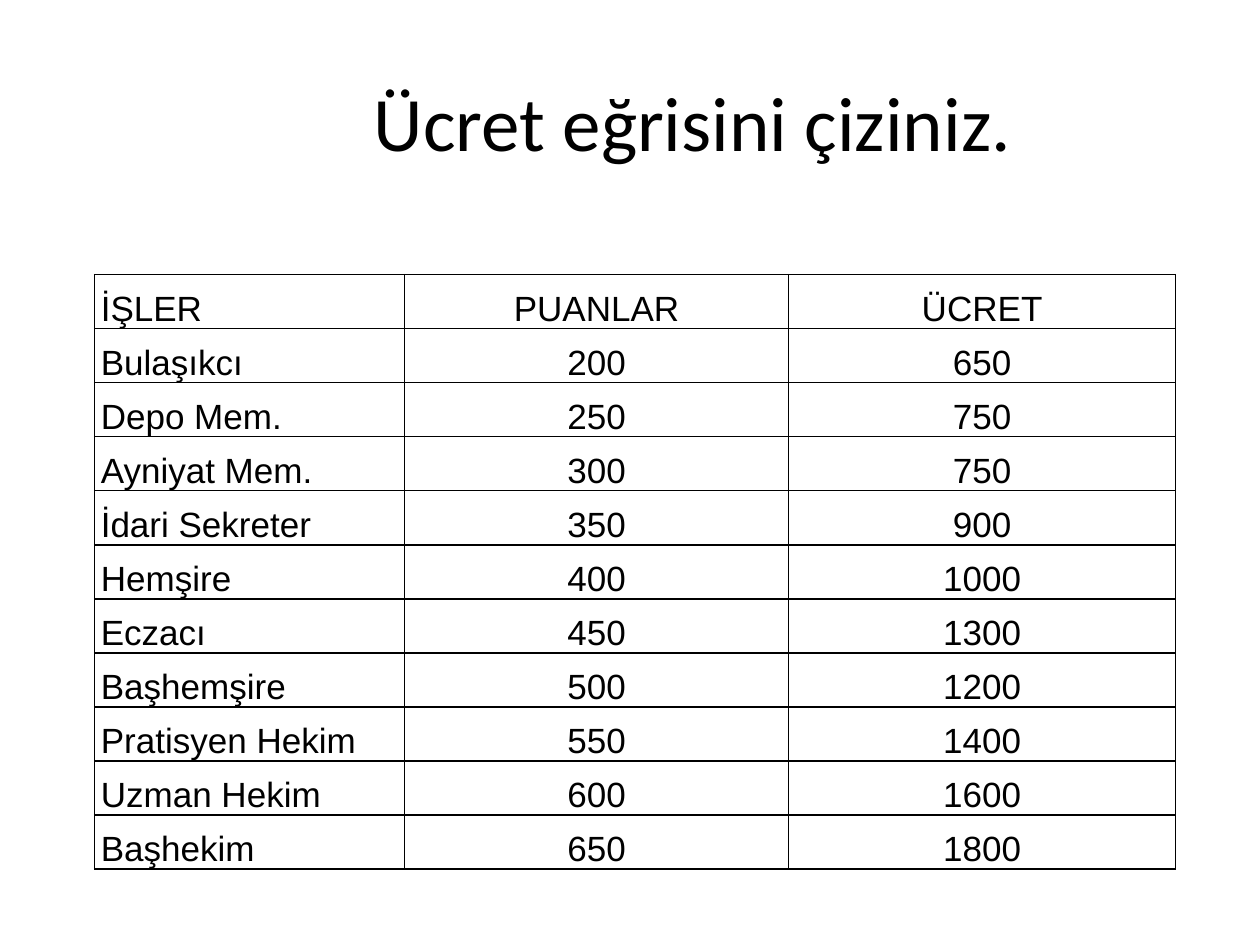
"""Build a slide with a table of jobs, their points and their wages."""
import dataclasses

import pptx
import pptx.dml.color
import pptx.enum.text
import pptx.oxml
import pptx.oxml.ns
import pptx.util

Inches = pptx.util.Inches
Align = pptx.enum.text.PP_ALIGN
Anchor = pptx.enum.text.MSO_ANCHOR
BLACK = "000000"
WHITE = "FFFFFF"
COLUMN_WIDTHS = (2.46, 3.05, 3.07)
TABLE_HEIGHT = 4.72


@dataclasses.dataclass(frozen=True)
class Job:
    name: str
    points: str
    wage: str


JOBS = (
    Job("İŞLER", "PUANLAR", "ÜCRET"),
    Job("Bulaşıkcı", "200", "650"),
    Job("Depo Mem.", "250", "750"),
    Job("Ayniyat Mem.", "300", "750"),
    Job("İdari Sekreter", "350", "900"),
    Job("Hemşire", "400", "1000"),
    Job("Eczacı", "450", "1300"),
    Job("Başhemşire", "500", "1200"),
    Job("Pratisyen Hekim", "550", "1400"),
    Job("Uzman Hekim", "600", "1600"),
    Job("Başhekim", "650", "1800"),
)


def color(code: str) -> pptx.dml.color.RGBColor:
    return pptx.dml.color.RGBColor.from_string(code)


def write(frame, text: str, *, font: str, size: float, align, code: str = BLACK) -> None:
    para = frame.paragraphs[0]
    para.alignment = align
    span = para.add_run()
    span.text = text
    span.font.name = font
    span.font.size = pptx.util.Pt(size)
    span.font.color.rgb = color(code)


def add_title(page, text: str) -> None:
    box = page.shapes.add_textbox(Inches(1.5), Inches(0.33), Inches(8), Inches(1.25))
    box.text_frame.word_wrap = True
    box.text_frame.vertical_anchor = Anchor.MIDDLE
    write(box.text_frame, text, font="Calibri", size=44, align=Align.CENTER)


def outline(cell, code: str = BLACK, width: float = 1) -> None:
    properties = cell._tc.get_or_add_tcPr()
    for side in ("lnL", "lnR", "lnT", "lnB"):
        properties.append(pptx.oxml.parse_xml(
            f'<a:{side} {pptx.oxml.ns.nsdecls("a")} w="{pptx.util.Pt(width)}">'
            f'<a:solidFill><a:srgbClr val="{code}"/></a:solidFill></a:{side}>'
        ))


def fill_cell(cell, text: str, align) -> None:
    cell.margin_left = cell.margin_right = Inches(0.05)
    cell.margin_top = cell.margin_bottom = 0
    cell.vertical_anchor = Anchor.BOTTOM
    outline(cell)
    cell.fill.solid()
    cell.fill.fore_color.rgb = color(WHITE)
    write(cell.text_frame, text, font="Arial", size=20, align=align)


def add_wage_table(page, jobs: tuple[Job, ...]) -> None:
    table = page.shapes.add_table(
        len(jobs), len(COLUMN_WIDTHS), Inches(0.75), Inches(2.18),
        Inches(sum(COLUMN_WIDTHS)), Inches(TABLE_HEIGHT),
    ).table
    table.first_row = table.horz_banding = False
    for column, width in zip(table.columns, COLUMN_WIDTHS):
        column.width = Inches(width)
    for row, job in zip(table.rows, jobs):
        row.height = Inches(TABLE_HEIGHT / len(jobs))
        aligns = (Align.LEFT, Align.CENTER, Align.CENTER)
        for cell, text, align in zip(row.cells, dataclasses.astuple(job), aligns):
            fill_cell(cell, text, align)


def main() -> None:
    deck = pptx.Presentation()
    deck.slide_width, deck.slide_height = Inches(10), Inches(7.5)
    page = deck.slides.add_slide(deck.slide_layouts[6])
    add_title(page, "Ücret eğrisini çiziniz.")
    add_wage_table(page, JOBS)
    deck.save("out.pptx")


if __name__ == "__main__":
    main()
